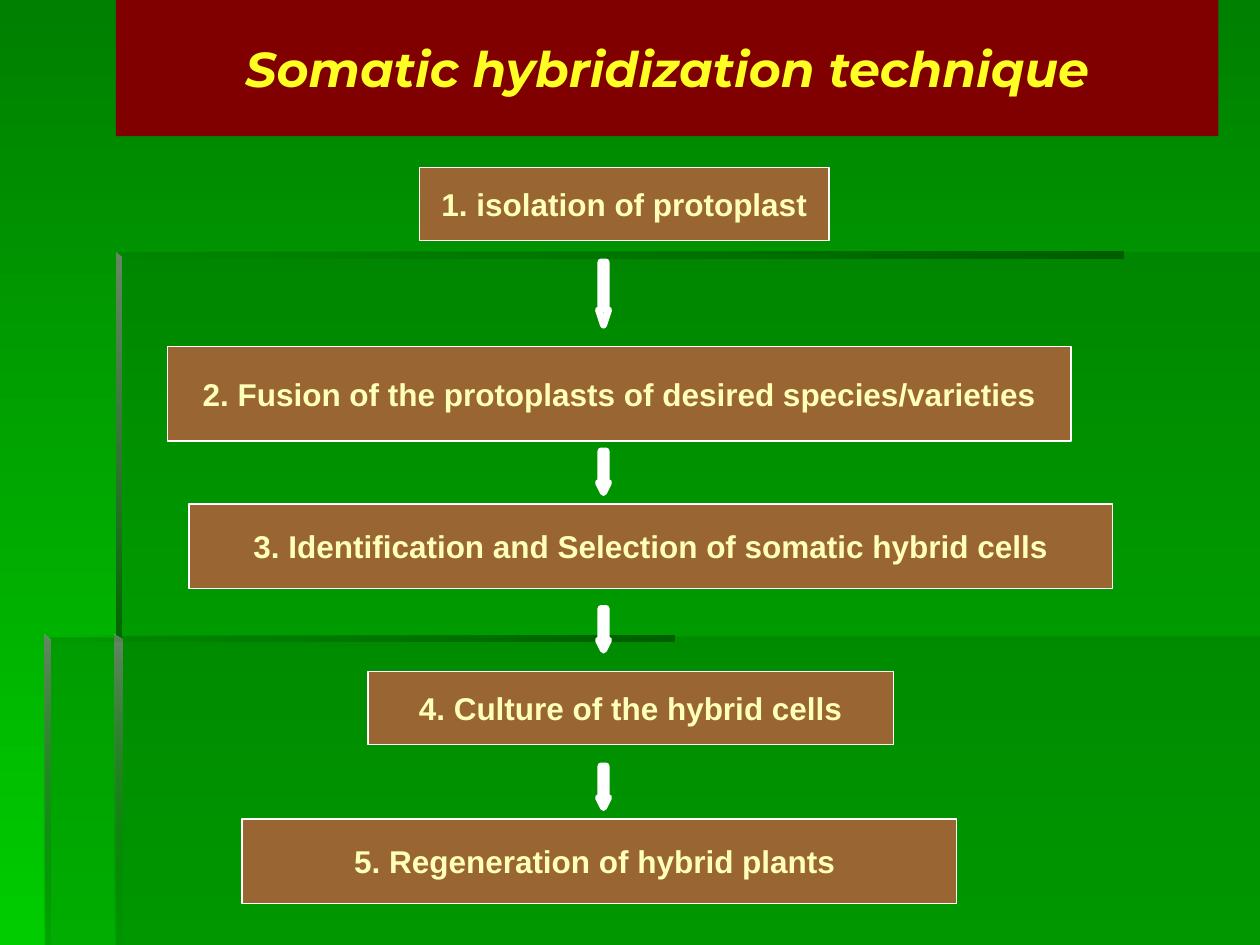
import pptx
import pptx.util
import pptx.dml.color
import pptx.enum.shapes
import pptx.enum.text
import pptx.oxml
import pptx.oxml.ns

Inches = pptx.util.Inches
Pt = pptx.util.Pt
SHAPE = pptx.enum.shapes.MSO_SHAPE


def rgb(value):
    return pptx.dml.color.RGBColor.from_string(value)


def set_opacity(element, percents):
    colors = element.iter(pptx.oxml.ns.qn("a:srgbClr"))
    for color, percent in zip(colors, percents):
        if percent < 100:
            alpha = pptx.oxml.parse_xml("<a:alpha %s/>" % pptx.oxml.ns.nsdecls("a"))
            alpha.set("val", str(percent * 1000))
            color.append(alpha)


prs = pptx.Presentation()
prs.slide_width = Inches(10)
prs.slide_height = Inches(7.5)
s = prs.slides.add_slide(prs.slide_layouts[6])

fill = s.background.fill
fill.gradient()
fill.gradient_angle = 270
for stop, color in zip(fill.gradient_stops, ("008000", "00CC00")):
    stop.color.rgb = rgb(color)

# points, colours, opacities, gradient angle
panels = [
    ([(0.92, 5.05), (0.92, 7.5), (10, 7.5), (10, 5.05)], ["006600"], [30], None),
    ([(0.94, 5.06), (0.36, 5.06), (0.36, 7.5), (10, 7.5), (10, 2), (0.94, 2)],
     ["006600"], [30], None),
    ([(0.92, 2), (0.92, 2.05), (8.92, 2.05), (8.92, 2)], ["006600", "005E00"], [0, 100], 0),
    ([(0.92, 2), (0.92, 5.1), (0.97, 5.1), (0.97, 2.04)], ["668666", "006600"], [100, 100], 270),
    ([(0.91, 7.5), (0.97, 7.5), (0.97, 5.08), (0.91, 5.04)], ["668666", "006600"], [100, 0], 270),
    ([(0.35, 5.04), (0.35, 5.09), (5.35, 5.09), (5.35, 5.04)], ["006600", "005E00"], [0, 100], 0),
    ([(0.35, 5.04), (0.35, 7.5), (0.4, 7.5), (0.4, 5.09)], ["668666", "006600"], [100, 10], 270),
]
for points, colors, opacities, angle in panels:
    corners = [(Inches(x), Inches(y)) for x, y in points]
    builder = s.shapes.build_freeform(*corners[0])
    builder.add_line_segments(corners[1:], close=True)
    sp = builder.convert_to_shape()
    sp.shadow.inherit = False
    sp.line.fill.background()
    if angle is None:
        sp.fill.solid()
        sp.fill.fore_color.rgb = rgb(colors[0])
    else:
        sp.fill.gradient()
        sp.fill.gradient_angle = angle
        for stop, color in zip(sp.fill.gradient_stops, colors):
            stop.color.rgb = rgb(color)
    set_opacity(sp._element.spPr, opacities)

boxes = [
    ("Somatic hybridization technique", 0.92, 0, 8.75, 1.08),
    ("1. isolation of protoplast", 3.33, 1.33, 3.25, 0.58),
    ("2. Fusion of the protoplasts of desired species/varieties", 1.33, 2.75, 7.17, 0.75),
    ("3. Identification and Selection of somatic hybrid cells", 1.5, 4, 7.33, 0.67),
    ("4. Culture of the hybrid cells", 2.92, 5.33, 4.17, 0.58),
    ("5. Regeneration of hybrid plants ", 1.92, 6.5, 5.67, 0.67),
]
for i, (text, x, y, w, h) in enumerate(boxes):
    is_title = i == 0
    sp = s.shapes.add_shape(SHAPE.RECTANGLE, Inches(x), Inches(y), Inches(w), Inches(h))
    sp.shadow.inherit = False
    sp.fill.solid()
    sp.fill.fore_color.rgb = rgb("800000" if is_title else "996633")
    if is_title:
        sp.line.fill.background()
    else:
        sp.line.color.rgb = rgb("FFFFFF")
        sp.line.width = Pt(0.75)
    tf = sp.text_frame
    tf.text = text
    tf.word_wrap = is_title
    tf.vertical_anchor = pptx.enum.text.MSO_ANCHOR.MIDDLE
    p = tf.paragraphs[0]
    p.alignment = pptx.enum.text.PP_ALIGN.CENTER
    font = p.runs[0].font
    font.name = "Montserrat" if is_title else "Arial"
    font.size = Pt(28 if is_title else 18)
    font.bold = True
    font.italic = is_title
    font.color.rgb = rgb("FFFF23" if is_title else "FFFFB7")

for y, h, head in [(2.08, 0.5, 1.5), (3.58, 0.33, 1), (4.83, 0.33, 1), (6.08, 0.33, 1)]:
    sp = s.shapes.add_shape(SHAPE.DOWN_ARROW, Inches(4.75), Inches(y), Inches(0.08), Inches(h))
    sp.shadow.inherit = False
    sp.adjustments[0] = 0.5
    sp.adjustments[1] = head
    sp.fill.solid()
    sp.fill.fore_color.rgb = rgb("996633")
    sp.line.color.rgb = rgb("FFFFFF")
    sp.line.width = Pt(4)

prs.save("out.pptx")
